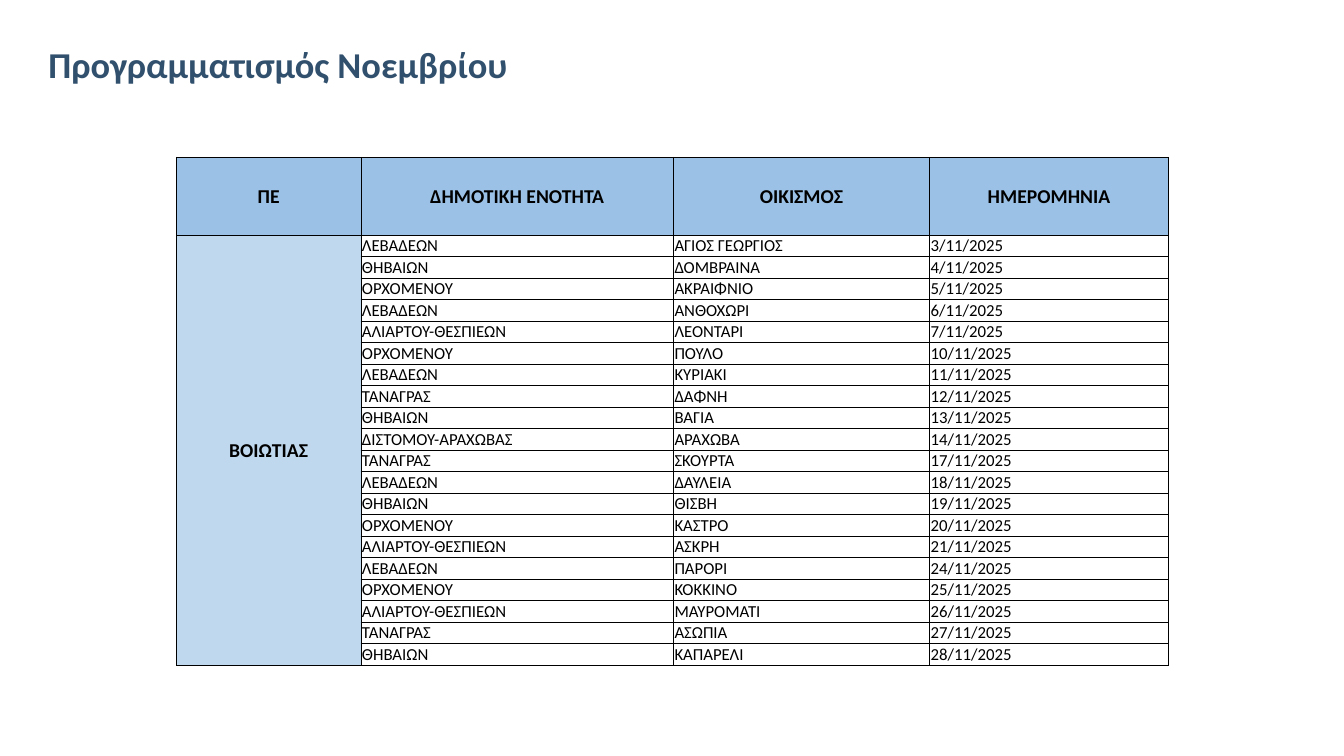
import pptx
import pptx.dml.color
import pptx.enum.text
import pptx.oxml
import pptx.oxml.ns
import pptx.util

WIDTH, HEIGHT = 13.33, 7.5
FONT = "Calibri"
COLUMNS = [1.83, 3.1, 2.54, 2.37]
HEADER_HEIGHT, ROW_HEIGHT = 0.77, 0.21
HEADERS = ["ΠΕ", "ΔΗΜΟΤΙΚΗ ΕΝΟΤΗΤΑ", "ΟΙΚΙΣΜΟΣ", "ΗΜΕΡΟΜΗΝΙΑ"]
REGION = "ΒΟΙΩΤΙΑΣ"
VISITS = [
    ("ΛΕΒΑΔΕΩΝ", "ΑΓΙΟΣ ΓΕΩΡΓΙΟΣ", 3),
    ("ΘΗΒΑΙΩΝ", "ΔΟΜΒΡΑΙΝΑ", 4),
    ("ΟΡΧΟΜΕΝΟΥ", "ΑΚΡΑΙΦΝΙΟ", 5),
    ("ΛΕΒΑΔΕΩΝ", "ΑΝΘΟΧΩΡΙ", 6),
    ("ΑΛΙΑΡΤΟΥ-ΘΕΣΠΙΕΩΝ", "ΛΕΟΝΤΑΡΙ", 7),
    ("ΟΡΧΟΜΕΝΟΥ", "ΠΟΥΛΟ", 10),
    ("ΛΕΒΑΔΕΩΝ", "ΚΥΡΙΑΚΙ", 11),
    ("ΤΑΝΑΓΡΑΣ", "ΔΑΦΝΗ", 12),
    ("ΘΗΒΑΙΩΝ", "ΒΑΓΙΑ", 13),
    ("ΔΙΣΤΟΜΟΥ-ΑΡΑΧΩΒΑΣ", "ΑΡΑΧΩΒΑ", 14),
    ("ΤΑΝΑΓΡΑΣ", "ΣΚΟΥΡΤΑ", 17),
    ("ΛΕΒΑΔΕΩΝ", "ΔΑΥΛΕΙΑ", 18),
    ("ΘΗΒΑΙΩΝ", "ΘΙΣΒΗ", 19),
    ("ΟΡΧΟΜΕΝΟΥ", "ΚΑΣΤΡΟ", 20),
    ("ΑΛΙΑΡΤΟΥ-ΘΕΣΠΙΕΩΝ", "ΑΣΚΡΗ", 21),
    ("ΛΕΒΑΔΕΩΝ", "ΠΑΡΟΡΙ", 24),
    ("ΟΡΧΟΜΕΝΟΥ", "ΚΟΚΚΙΝΟ", 25),
    ("ΑΛΙΑΡΤΟΥ-ΘΕΣΠΙΕΩΝ", "ΜΑΥΡΟΜΑΤΙ", 26),
    ("ΤΑΝΑΓΡΑΣ", "ΑΣΩΠΙΑ", 27),
    ("ΘΗΒΑΙΩΝ", "ΚΑΠΑΡΕΛΙ", 28),
]


def inches(value):
    return pptx.util.Inches(value)


def rgb(value):
    return pptx.dml.color.RGBColor.from_string(value)


def set_font(p, size, color, bold):
    p.font.name = FONT
    p.font.size = pptx.util.Pt(size)
    p.font.bold = bold
    p.font.color.rgb = rgb(color)


def set_margins(target, left, top, right, bottom):
    target.margin_left, target.margin_top = inches(left), inches(top)
    target.margin_right, target.margin_bottom = inches(right), inches(bottom)


def add_title(slide, text):
    sp = slide.shapes.title
    sp.left, sp.top = inches(0.36), inches(0.25)
    sp.width, sp.height = inches(0.93 * WIDTH), inches(0.66)
    tf = sp.text_frame
    tf.text = text
    tf.word_wrap = True
    tf.auto_size = pptx.enum.text.MSO_AUTO_SIZE.NONE
    tf.vertical_anchor = pptx.enum.text.MSO_ANCHOR.BOTTOM
    set_margins(tf, 0.12, 0.05, 0.1, 0.05)
    p = tf.paragraphs[0]
    p.alignment = pptx.enum.text.PP_ALIGN.LEFT
    p.line_spacing = 0.9
    set_font(p, 26, "31506D", True)


def add_borders(cell, color, width):
    properties = cell._tc.get_or_add_tcPr()
    for side in ("lnL", "lnR", "lnT", "lnB"):
        properties.append(pptx.oxml.parse_xml(
            f'<a:{side} {pptx.oxml.ns.nsdecls("a")} w="{pptx.util.Pt(width)}">'
            f'<a:solidFill><a:srgbClr val="{color}"/></a:solidFill></a:{side}>'))


def style_cell(cell, text, fill=None):
    add_borders(cell, "000000", 0.5)
    if fill:
        cell.fill.solid()
        cell.fill.fore_color.rgb = rgb(fill)
    else:
        cell.fill.background()
    cell.vertical_anchor = pptx.enum.text.MSO_ANCHOR.MIDDLE
    set_margins(cell, 0.01, 0.01, 0.01, 0)
    cell.text = text
    p = cell.text_frame.paragraphs[0]
    align = pptx.enum.text.PP_ALIGN
    p.alignment = align.CENTER if fill else align.LEFT
    set_font(p, 14 if fill else 12, "000000", bool(fill))


def add_schedule(slide):
    count = len(VISITS)
    table = slide.shapes.add_table(
        count + 1, len(COLUMNS), inches(1.75), inches(1.56),
        inches(sum(COLUMNS)), inches(HEADER_HEIGHT + count * ROW_HEIGHT)).table
    table.first_row = table.horz_banding = False
    for column, width in zip(table.columns, COLUMNS):
        column.width = inches(width)
    for i, row in enumerate(table.rows):
        row.height = inches(ROW_HEIGHT if i else HEADER_HEIGHT)
    for j, header in enumerate(HEADERS):
        style_cell(table.cell(0, j), header, "9BC2E6")
    for i, (unit, settlement, day) in enumerate(VISITS, 1):
        style_cell(table.cell(i, 0), REGION if i == 1 else "", "C0D8ED")
        for j, text in enumerate((unit, settlement, f"{day}/11/2025"), 1):
            style_cell(table.cell(i, j), text)
    table.cell(1, 0).merge(table.cell(count, 0))


def main():
    prs = pptx.Presentation()
    prs.slide_width, prs.slide_height = inches(WIDTH), inches(HEIGHT)
    slide = prs.slides.add_slide(prs.slide_layouts.get_by_name("Title Only"))
    add_title(slide, "Προγραμματισμός Νοεμβρίου")
    add_schedule(slide)
    prs.save("out.pptx")


if __name__ == "__main__":
    main()
